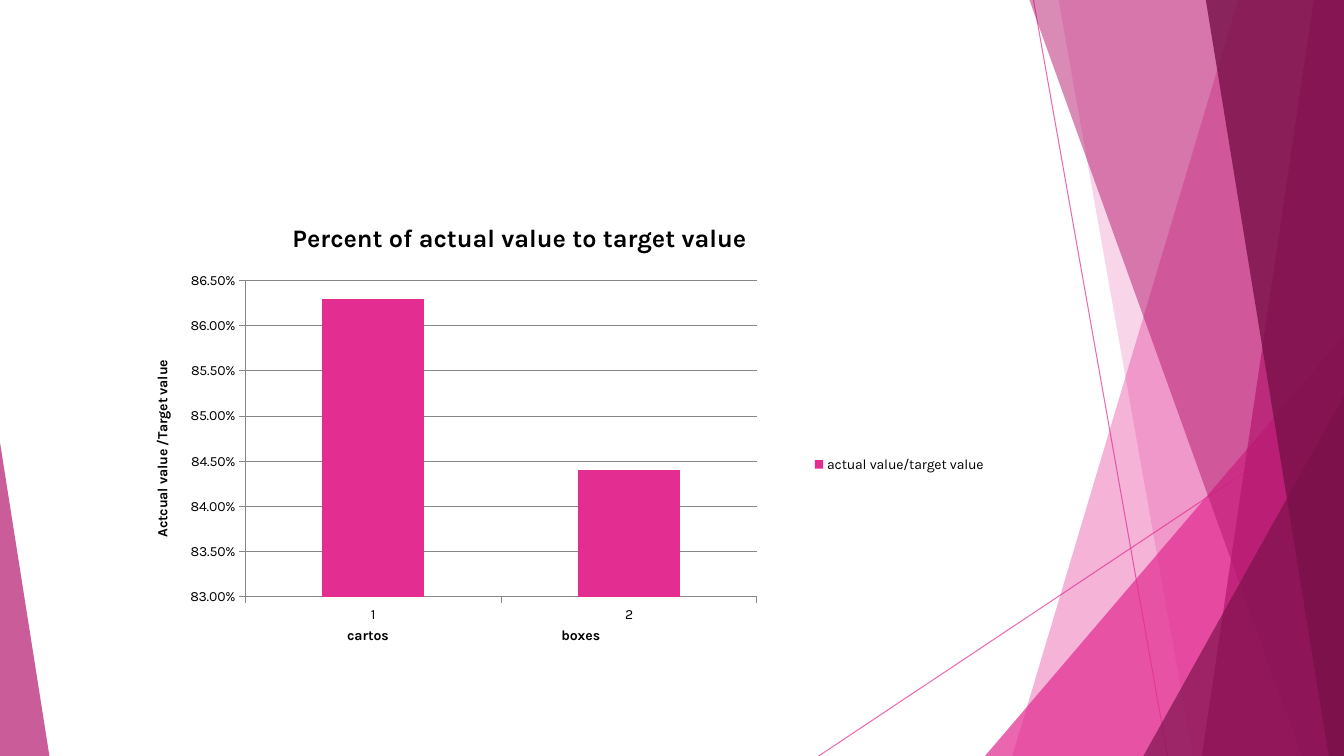
import dataclasses

import lxml.etree
import pptx
import pptx.chart.data
import pptx.dml.color
import pptx.enum.chart
import pptx.enum.shapes
import pptx.enum.text
import pptx.oxml.ns
import pptx.util

Inches = pptx.util.Inches
Pt = pptx.util.Pt
qn = pptx.oxml.ns.qn
RGB = pptx.dml.color.RGBColor.from_string


@dataclasses.dataclass(frozen=True)
class Theme:
    font: str = "Karla"
    text: str = "000000"
    pink: str = "E32D91"
    magenta: str = "B4186E"
    plum: str = "781049"
    grid: str = "878787"
    title_size: int = 18
    chart_size: int = 10


class SlideBuilder:
    def __init__(self, prs, theme):
        self.theme = theme
        self.slide = prs.slides.add_slide(prs.slide_layouts[5])
        self.width = prs.slide_width
        self.height = prs.slide_height

    def set_alpha(self, fill_parent, percent):
        color = next(fill_parent.iter(qn("a:srgbClr")))
        alpha = lxml.etree.SubElement(color, qn("a:alpha"))
        alpha.set("val", str(percent * 1000))

    def paint(self, sp, color, alpha):
        sp.shadow.inherit = False
        sp.fill.solid()
        sp.fill.fore_color.rgb = RGB(color)
        sp.line.fill.background()
        self.set_alpha(sp._element.spPr, alpha)

    def line(self, x1, y1, x2, y2):
        cx = self.slide.shapes.add_connector(
            pptx.enum.shapes.MSO_CONNECTOR.STRAIGHT,
            Inches(x1), Inches(y1), Inches(x2), Inches(y2))
        cx.line.width = Pt(0.75)
        cx.line.color.rgb = RGB(self.theme.pink)
        self.set_alpha(cx._element.spPr, 70)
        lxml.etree.SubElement(cx._element.spPr, qn("a:effectLst"))

    def band(self, top_x, bottom_x, color, alpha):
        fb = self.slide.shapes.build_freeform(Inches(top_x), 0, scale=1.0)
        fb.add_line_segments([(self.width, 0), (self.width, self.height),
                              (Inches(bottom_x), self.height)], close=True)
        self.paint(fb.convert_to_shape(), color, alpha)

    def triangle(self, x, y, w, apex, color, alpha):
        sp = self.slide.shapes.add_shape(
            pptx.enum.shapes.MSO_SHAPE.ISOSCELES_TRIANGLE,
            Inches(x), Inches(y), Inches(w), self.height - Inches(y))
        sp.adjustments[0] = apex
        self.paint(sp, color, alpha)

    def style(self, font, size, bold):
        font.name = self.theme.font
        font.size = Pt(size)
        font.bold = bold
        font.color.rgb = RGB(self.theme.text)

    def bold_text(self, tf, text, size, align):
        p = tf.paragraphs[0]
        p.alignment = align
        r = p.add_run()
        r.text = text
        self.style(r.font, size, True)

    def title(self, text, x, y, w, h):
        sp = self.slide.shapes.title
        sp.left, sp.top, sp.width, sp.height = map(Inches, (x, y, w, h))
        tf = sp.text_frame
        tf.word_wrap = False
        tf.auto_size = pptx.enum.text.MSO_AUTO_SIZE.NONE
        tf.vertical_anchor = pptx.enum.text.MSO_ANCHOR.TOP
        self.bold_text(tf, text, self.theme.title_size, pptx.enum.text.PP_ALIGN.LEFT)

    def label(self, text, center_x, center_y):
        w, h = 1, 0.3
        sp = self.slide.shapes.add_textbox(
            Inches(center_x - w / 2), Inches(center_y - h / 2), Inches(w), Inches(h))
        tf = sp.text_frame
        tf.word_wrap = True
        tf.vertical_anchor = pptx.enum.text.MSO_ANCHOR.MIDDLE
        self.bold_text(tf, text, self.theme.chart_size, pptx.enum.text.PP_ALIGN.CENTER)

    def place(self, parent, index, inner=False, **fractions):
        for old in parent.findall(qn("c:layout")):
            parent.remove(old)
        layout = lxml.etree.Element(qn("c:layout"))
        manual = lxml.etree.SubElement(layout, qn("c:manualLayout"))
        settings = {"layoutTarget": "inner"} if inner else {}
        settings.update(xMode="edge", yMode="edge", **fractions)
        for tag, val in settings.items():
            lxml.etree.SubElement(manual, qn("c:" + tag)).set("val", str(val))
        parent.insert(index, layout)

    def axis(self, axis):
        axis.major_tick_mark = pptx.enum.chart.XL_TICK_MARK.OUTSIDE
        axis.minor_tick_mark = pptx.enum.chart.XL_TICK_MARK.NONE
        axis.format.line.color.rgb = RGB(self.theme.grid)
        self.style(axis.tick_labels.font, self.theme.chart_size, False)

    def column_chart(self, x, y, w, h, cats, name, values, axis_title):
        data = pptx.chart.data.CategoryChartData(number_format="0.00%")
        data.categories = cats
        data.add_series(name, values)
        chart = self.slide.shapes.add_chart(
            pptx.enum.chart.XL_CHART_TYPE.COLUMN_STACKED,
            Inches(x), Inches(y), Inches(w), Inches(h), data).chart
        chart.has_title = False
        self.style(chart.font, self.theme.chart_size, False)
        plot = chart.plots[0]
        plot.vary_by_categories = False
        plot.gap_width = 150
        plot.overlap = 100
        fill = plot.series[0].format.fill
        fill.solid()
        fill.fore_color.rgb = RGB(self.theme.pink)
        self.place(chart._chartSpace.chart.plotArea, 0, inner=True,
                   x=0.18, y=0.1, w=0.54, h=0.74)

        self.axis(chart.category_axis)
        va = chart.value_axis
        self.axis(va)
        va.minimum_scale, va.maximum_scale, va.major_unit = 0.83, 0.865, 0.005
        va.tick_labels.number_format = "0.00%"
        va.tick_labels.number_format_is_linked = False
        va.has_major_gridlines = True
        va.major_gridlines.format.line.color.rgb = RGB(self.theme.grid)
        tf = va.axis_title.text_frame
        self.bold_text(tf, axis_title, self.theme.chart_size,
                       pptx.enum.text.PP_ALIGN.CENTER)
        tf._txBody.find(qn("a:bodyPr")).set("rot", "-5400000")
        self.place(va.axis_title._element, 1, x=0.08, y=0.28)

        chart.has_legend = True
        legend = chart.legend
        legend.position = pptx.enum.chart.XL_LEGEND_POSITION.RIGHT
        legend.include_in_layout = False
        self.style(legend.font, self.theme.chart_size, False)
        self.place(legend._element, 1, x=0.77, y=0.49, w=0.2, h=0.08)


def main():
    prs = pptx.Presentation()
    prs.slide_width = Inches(13.33)
    prs.slide_height = Inches(7.5)
    theme = Theme()
    s = SlideBuilder(prs, theme)

    s.line(10.25, 0, 11.58, 7.5)
    s.line(13.33, 4.03, 8.12, 7.5)
    s.band(12.28, 10.04, theme.pink, 36)
    s.band(10.5, 11.83, theme.pink, 20)
    s.triangle(9.77, 3.33, 3.56, 1, theme.pink, 72)
    s.band(10.21, 12.91, theme.magenta, 50)
    s.band(13.03, 11.92, theme.magenta, 70)
    s.band(11.96, 13.18, theme.plum, 80)
    s.triangle(11.34, 3.93, 1.99, 1, theme.plum, 66)
    s.triangle(0, 4.39, 0.49, 0, theme.magenta, 70)

    s.column_chart(0.74, 2.36, 9.4, 4.24, ["1", "2"], "actual value/target value",
                   [0.863, 0.844], "Actcual value /Target value")
    for text, center_x in (("cartos", 3.65), ("boxes", 5.76)):
        s.label(text, center_x, 6.3)
    s.title("Percent of actual value to target value", 2.8, 2.16, 5.02, 0.4)
    prs.save("out.pptx")


if __name__ == "__main__":
    main()
